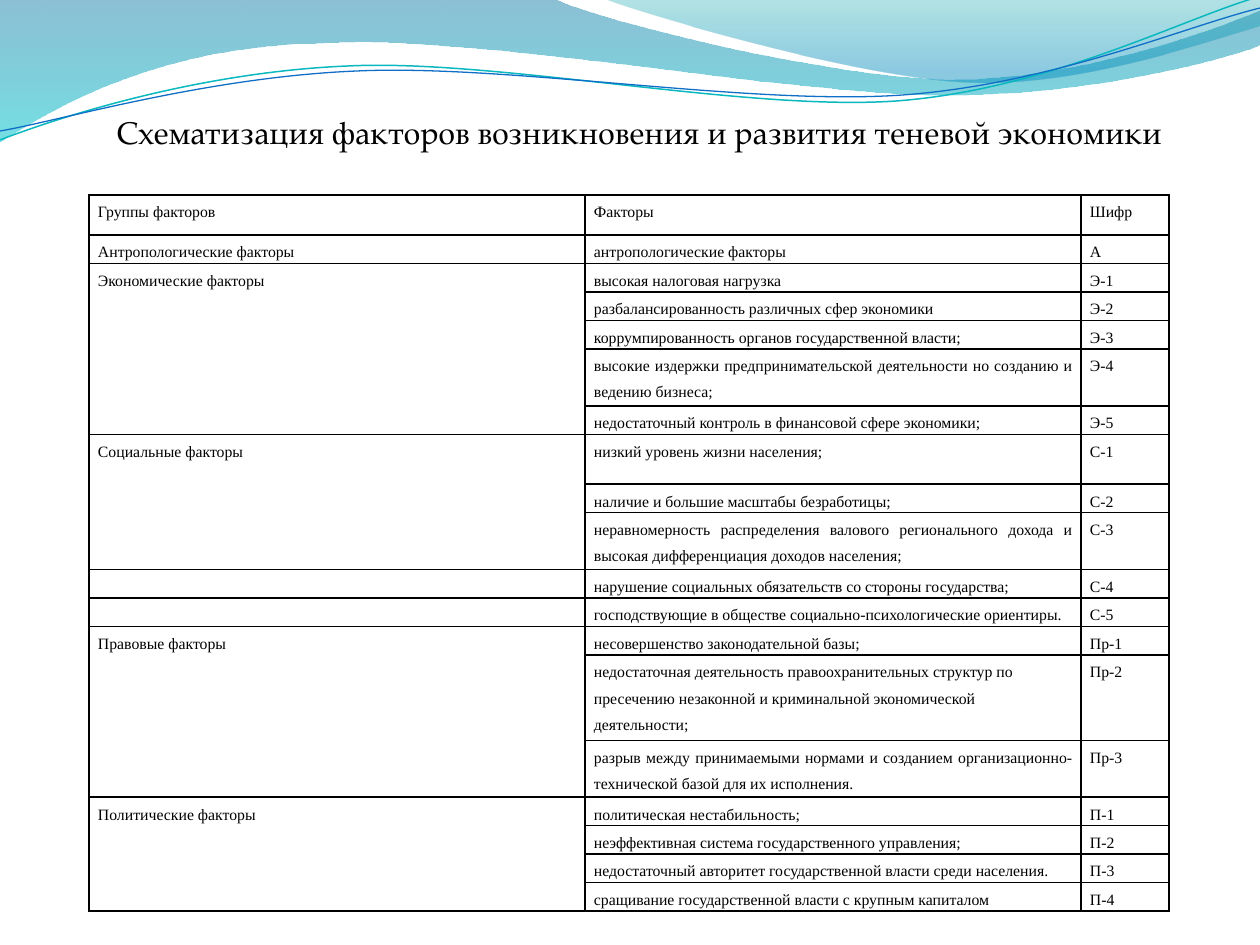
import itertools
import math
from dataclasses import dataclass

import lxml.etree
import pptx
import pptx.dml.color
import pptx.enum.text
import pptx.oxml.ns
import pptx.util

EMU_PER_PX = 914400 / 126
BLACK = "000000"
ALIGN = pptx.enum.text.PP_ALIGN
SINGLE, DOUBLE = 25, 50  # row heights
HEADER_HEIGHT = 40
COLUMN_WIDTHS = (496, 496, 88)


@dataclass(frozen=True)
class Stop:
    position: float
    color: str
    opacity: int


@dataclass(frozen=True)
class Wave:
    """Each step is an end point (2 numbers) or a Bezier curve (6 numbers)."""
    start: tuple[int, int]
    steps: tuple[tuple[int, ...], ...]
    stops: tuple[Stop, ...] = ()
    line_color: str = ""
    line_width: float = 0
    tilt: float = 0
    center: tuple[int, int] = (0, 0)


@dataclass(frozen=True)
class Factor:
    text: str
    height: int = SINGLE
    alignment: ALIGN = ALIGN.JUSTIFY


@dataclass(frozen=True)
class Group:
    name: str
    code: str
    merged_rows: int
    factors: tuple[Factor, ...]


WAVES = (
    Wave((0, 0), ((554, -1), (600, 21, 837, 79, 955, 79), (1075, 79, 1207, 33, 1260, 11),
                  (1261, 45), (1239, 55, 1096, 96, 940, 95), (784, 94, 481, 35, 324, 43),
                  (163, 45, 58, 105, -1, 142), (0, 0)),
         stops=(Stop(0, "0074A1", 45), Stop(1, "00C6CF", 55))),
    Wave((604, -1), ((641, 14, 859, 78, 969, 82), (1079, 87, 1211, 40, 1260, 26),
                     (1260, 0), (604, -1)),
         stops=(Stop(0, "00A1A9", 30), Stop(0.8, "008BBF", 45))),
    Wave((0, 140), ((60, 117, 199, 72, 349, 66), (498, 59, 747, 112, 898, 101),
                    (1050, 89, 1182, 19, 1258, -3)),
         line_color="0AB8BF", line_width=0.85, tilt=2.7, center=(629, 72)),
    Wave((0, 131), ((59, 121, 207, 77, 357, 71), (508, 64, 752, 106, 903, 95),
                    (1053, 84, 1186, 26, 1260, 8)),
         line_color="0F6FC6", line_width=0.75, tilt=2.7, center=(629, 74)),
)

HEADINGS = ("Группы факторов", "Факторы", "Шифр")
GROUPS = (
    Group("Антропологические факторы", "А", 1, (Factor("антропологические факторы"),)),
    Group("Экономические факторы", "Э", 5, (
        Factor("высокая налоговая нагрузка"),
        Factor("разбалансированность различных сфер экономики"),
        Factor("коррумпированность органов государственной власти;"),
        Factor("высокие издержки предпринимательской деятельности но созданию и "
               "ведению бизнеса;", DOUBLE),
        Factor("недостаточный контроль в финансовой сфере экономики;"))),
    Group("Социальные факторы", "С", 3, (
        Factor("низкий уровень жизни населения;", DOUBLE),
        Factor("наличие и большие масштабы безработицы;"),
        Factor("неравномерность распределения валового регионального дохода и "
               "высокая дифференциация доходов населения;", DOUBLE),
        Factor("нарушение социальных обязательств со стороны государства;"),
        Factor("господствующие в обществе социально-психологические ориентиры."))),
    Group("Правовые факторы", "Пр", 3, (
        Factor("несовершенство законодательной базы;"),
        Factor("недостаточная деятельность правоохранительных структур по пресечению "
               "незаконной и криминальной экономической деятельности;", DOUBLE, ALIGN.LEFT),
        Factor("разрыв между принимаемыми нормами и созданием "
               "организационно-технической базой для их исполнения.", DOUBLE))),
    Group("Политические факторы", "П", 4, (
        Factor("политическая нестабильность;"),
        Factor("неэффективная система государственного управления;"),
        Factor("недостаточный авторитет государственной власти среди населения."),
        Factor("сращивание государственной власти с крупным капиталом"))),
)


def px(value: float) -> pptx.util.Emu:
    return pptx.util.Emu(round(value * EMU_PER_PX))


def rgb(color: str) -> pptx.dml.color.RGBColor:
    return pptx.dml.color.RGBColor.from_string(color)


def add_child(parent, tag: str, **attributes: str):
    return lxml.etree.SubElement(parent, pptx.oxml.ns.qn(tag), attributes)


def level_points(wave: Wave) -> list[tuple[int, int]]:
    """Turn the points level, so that the shape's rotation tilts them back."""
    cosine, sine = math.cos(math.radians(wave.tilt)), math.sin(math.radians(wave.tilt))
    x0, y0 = wave.center
    numbers = [*wave.start, *itertools.chain.from_iterable(wave.steps)]
    return [(px(x0 + (x - x0) * cosine - (y - y0) * sine),
             px(y0 + (x - x0) * sine + (y - y0) * cosine))
            for x, y in zip(numbers[::2], numbers[1::2])]


def bend(shape, wave: Wave) -> None:
    """Join the three segments of every curve step into one Bezier segment."""
    outline = next(shape._element.iter(pptx.oxml.ns.qn("a:path")))
    segments = iter(outline.findall(pptx.oxml.ns.qn("a:lnTo")))
    for step in wave.steps:
        curve, *others = itertools.islice(segments, len(step) // 2)
        if others:
            curve.tag = pptx.oxml.ns.qn("a:cubicBezTo")
        for segment in others:
            curve.append(segment[0])
            outline.remove(segment)


def add_wave(slide, wave: Wave) -> None:
    first, *rest = level_points(wave)
    builder = slide.shapes.build_freeform(*first, scale=1.0)
    builder.add_line_segments(rest, close=bool(wave.stops))
    shape = builder.convert_to_shape()
    bend(shape, wave)
    shape.shadow.inherit = False
    shape.rotation = -wave.tilt % 360
    if not wave.stops:
        shape.fill.background()
        shape.line.color.rgb = rgb(wave.line_color)
        shape.line.width = pptx.util.Pt(wave.line_width)
        return
    shape.line.fill.background()
    shape.fill.gradient()
    shape.fill.gradient_angle = 270
    for gradient_stop, stop in zip(shape.fill.gradient_stops, wave.stops):
        gradient_stop.position = stop.position
        gradient_stop.color.rgb = rgb(stop.color)
    for element, stop in zip(shape._element.iter(pptx.oxml.ns.qn("a:srgbClr")), wave.stops):
        add_child(element, "a:alpha", val=str(stop.opacity * 1000))


def add_run(paragraph, text: str, font_name: str, size: int) -> None:
    run = paragraph.add_run()
    run.text = text
    run.font.name = font_name
    run.font.size = pptx.util.Pt(size)
    run.font.color.rgb = rgb(BLACK)


def add_title(slide) -> None:
    frame = slide.shapes.add_textbox(px(104), px(107), px(1081), px(50)).text_frame
    frame.word_wrap = True
    frame.auto_size = pptx.enum.text.MSO_AUTO_SIZE.SHAPE_TO_FIT_TEXT
    add_run(frame.paragraphs[0],
            "Схематизация факторов возникновения и развития теневой экономики",
            "TeX Gyre Pagella", 18)


def fill_cell(cell, text: str, alignment: ALIGN) -> None:
    cell.margin_left = cell.margin_right = px(9)
    cell.margin_top = cell.margin_bottom = 0
    properties = cell._tc.get_or_add_tcPr()
    for side in ("a:lnL", "a:lnR", "a:lnT", "a:lnB"):
        border = add_child(properties, side, w=str(pptx.util.Pt(1)))
        add_child(add_child(border, "a:solidFill"), "a:srgbClr", val=BLACK)
    cell.fill.background()
    paragraph = cell.text_frame.paragraphs[0]
    paragraph.alignment = alignment
    paragraph.line_spacing = 1.5
    if text:
        add_run(paragraph, text, "Times New Roman", 9)
    else:
        add_child(paragraph._p, "a:endParaRPr", sz="900")


def add_factor_table(slide) -> None:
    rows = [(HEADINGS, HEADER_HEIGHT, ALIGN.JUSTIFY)]
    merges = []
    for group in GROUPS:
        merges.append((len(rows), len(rows) + group.merged_rows - 1))
        for number, factor in enumerate(group.factors, 1):
            code = f"{group.code}-{number}" if len(group.factors) > 1 else group.code
            name = group.name if number == 1 else ""
            rows.append(((name, factor.text, code), factor.height, factor.alignment))

    table = slide.shapes.add_table(len(rows), len(COLUMN_WIDTHS), px(89), px(195),
                                   px(sum(COLUMN_WIDTHS)),
                                   px(sum(height for _, height, _ in rows))).table
    table.first_row = table.horz_banding = False
    for column, width in zip(table.columns, COLUMN_WIDTHS):
        column.width = px(width)
    for row, (texts, height, alignment) in zip(table.rows, rows):
        row.height = px(height)
        for cell, text in zip(row.cells, texts):
            fill_cell(cell, text, alignment)
    for first, last in merges:
        if last > first:
            table.cell(first, 0).merge(table.cell(last, 0))


def main() -> None:
    presentation = pptx.Presentation()
    presentation.slide_width, presentation.slide_height = px(1260), px(945)
    slide = presentation.slides.add_slide(presentation.slide_layouts[6])
    # Decorative waves behind the content
    for wave in WAVES:
        add_wave(slide, wave)
    # Title and table
    add_title(slide)
    add_factor_table(slide)
    presentation.save("out.pptx")


if __name__ == "__main__":
    main()
